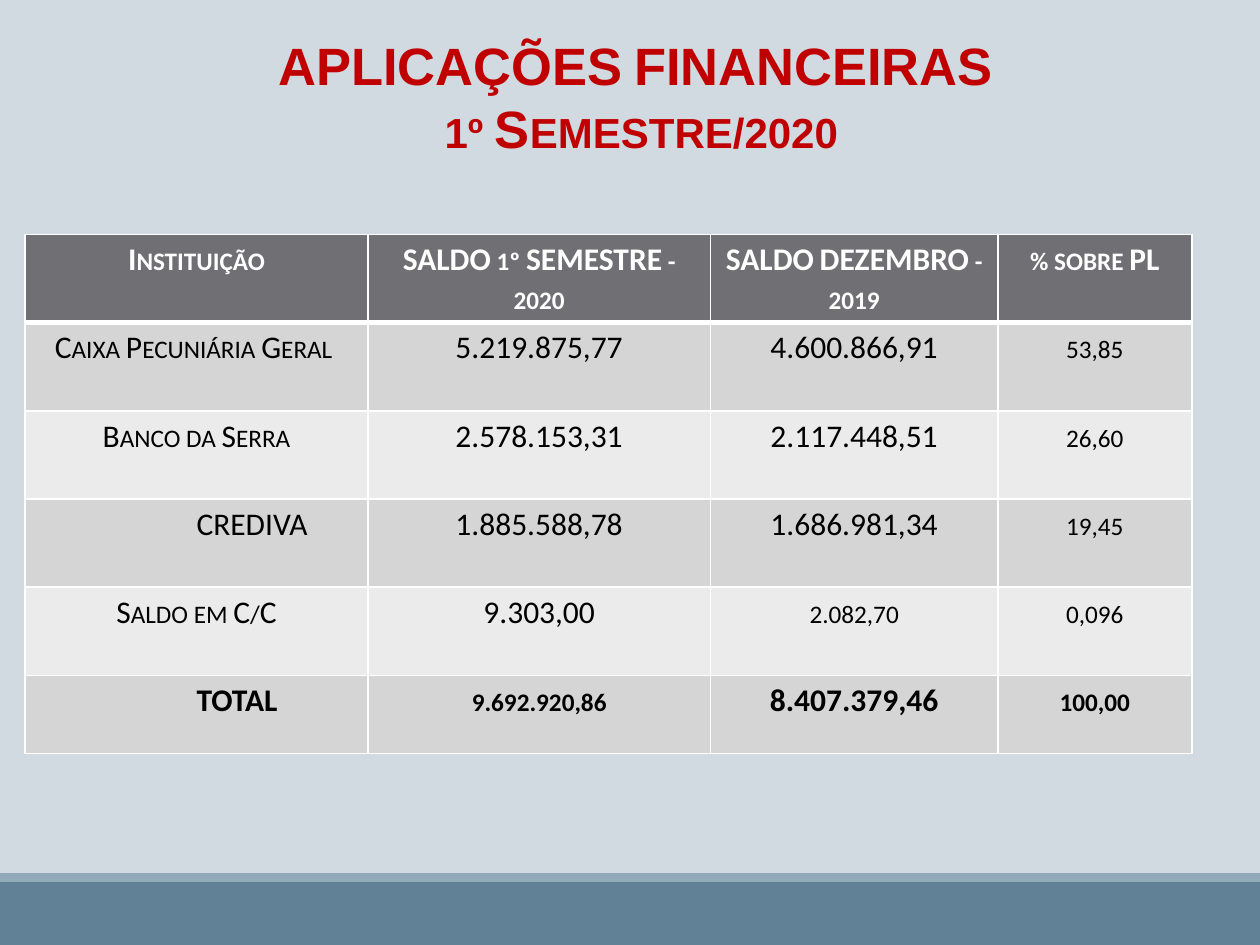
from lxml.etree import SubElement
from pptx import Presentation
from pptx.dml.color import RGBColor
from pptx.enum.shapes import MSO_SHAPE
from pptx.enum.text import PP_ALIGN
from pptx.oxml.ns import qn
from pptx.util import Inches, Pt

COLOURS = {
    "background": "D1D9E1", "footer": "618197", "footer_edge": "92A9B9",
    "title": "C00000", "header": "6F6F74", "odd_row": "D5D5D6",
    "even_row": "EBEBEB", "rule": "FFFFFF", "header_text": "FFFFFF",
    "body_text": "000000",
}
WIDTH, HEIGHT = 10, 7.5
COLUMN_WIDTHS = [0.272, 0.272, 0.228, 0.154]
ROW_HEIGHTS = [0.7 / HEIGHT] * 5 + [0.62 / HEIGHT]
BALANCES = [
    ["Instituição", "SALDO 1º SEMESTRE - 2020", "SALDO DEZEMBRO - 2019", "% sobre PL"],
    ["Caixa Pecuniária Geral ", "5.219.875,77", "4.600.866,91", "53,85"],
    ["Banco da Serra", "2.578.153,31", "2.117.448,51", "26,60"],
    ["CREDIVA", "1.885.588,78", "1.686.981,34", "19,45"],
    ["Saldo em C/C", "9.303,00", "2.082,70", "0,096"],
    ["TOTAL", "9.692.920,86", "8.407.379,46", "100,00"],
]
FULL_SIZE_CELLS = {(1, 1), (1, 2), (2, 1), (2, 2), (3, 1), (3, 2), (4, 1), (5, 2)}


def colour(name):
    return RGBColor.from_string(COLOURS[name])


class Deck:
    """Places elements by shares of the slide's width and height."""

    def __init__(self):
        self.presentation = Presentation()
        self.presentation.slide_width = Inches(WIDTH)
        self.presentation.slide_height = Inches(HEIGHT)
        self.slide = self.presentation.slides.add_slide(
            self.presentation.slide_layouts[6])
        fill = self.slide.background.fill
        fill.solid()
        fill.fore_color.rgb = colour("background")

    def area(self, left, top, width, height):
        return (Inches(left * WIDTH), Inches(top * HEIGHT),
                Inches(width * WIDTH), Inches(height * HEIGHT))

    def band(self, top, height, fill_name):
        bar = self.slide.shapes.add_shape(
            MSO_SHAPE.RECTANGLE, *self.area(0, top, 1, height))
        bar.shadow.inherit = False
        bar.fill.solid()
        bar.fill.fore_color.rgb = colour(fill_name)
        bar.line.fill.background()

    def centred_run(self, paragraph, text, size, font, ink, bold, small_caps=True):
        paragraph.alignment = PP_ALIGN.CENTER
        run = paragraph.add_run()
        run.text = text
        run.font.size = Pt(size)
        run.font.name = font
        run.font.bold = bold
        run.font.color.rgb = colour(ink)
        if small_caps:
            run._r.get_or_add_rPr().set("cap", "small")

    def title(self, lines, *share):
        frame = self.slide.shapes.add_textbox(*self.area(*share)).text_frame
        frame.word_wrap = True
        for index, line in enumerate(lines):
            paragraph = frame.add_paragraph() if index else frame.paragraphs[0]
            self.centred_run(paragraph, line, 30, "Arial", "title", True)

    def cell_rules(self, cell, row):
        """Thin white rules, with a thick one between header and body."""
        widths = {"L": 1, "R": 1, "T": 3 if row == 1 else 1, "B": 1 if row else 3}
        properties = cell._tc.get_or_add_tcPr()
        for side, width in widths.items():
            rule = SubElement(properties, qn(f"a:ln{side}"), w=str(Pt(width)))
            fill = SubElement(rule, qn("a:solidFill"))
            SubElement(fill, qn("a:srgbClr"), val=COLOURS["rule"])

    def balance_table(self, rows, left, top):
        table = self.slide.shapes.add_table(
            len(rows), len(COLUMN_WIDTHS),
            *self.area(left, top, sum(COLUMN_WIDTHS), sum(ROW_HEIGHTS))).table
        for column, share in zip(table.columns, COLUMN_WIDTHS):
            column.width = Inches(share * WIDTH)
        for table_row, share in zip(table.rows, ROW_HEIGHTS):
            table_row.height = Inches(share * HEIGHT)
        for row, texts in enumerate(rows):
            is_header = row == 0
            fill_name = "header" if is_header else ("even_row", "odd_row")[row % 2]
            ink = "header_text" if is_header else "body_text"
            bold = row in (0, len(rows) - 1)
            for column, text in enumerate(texts):
                cell = table.cell(row, column)
                self.cell_rules(cell, row)
                cell.fill.solid()
                cell.fill.fore_color.rgb = colour(fill_name)
                self.centred_run(cell.text_frame.paragraphs[0], text, 18, "Calibri",
                                 ink, bold, (row, column) not in FULL_SIZE_CELLS)


def main():
    deck = Deck()
    deck.band(7 / HEIGHT, 0.5 / HEIGHT, "footer")
    deck.band(6.93 / HEIGHT, 0.07 / HEIGHT, "footer_edge")
    deck.title(["APLICAÇÕES FINANCEIRAS ", "1º Semestre/2020"],
               0.074, 0.21 / HEIGHT, 0.87, 1.11 / HEIGHT)
    deck.balance_table(BALANCES, 0.02, 1.86 / HEIGHT)
    deck.presentation.save("out.pptx")


if __name__ == "__main__":
    main()
